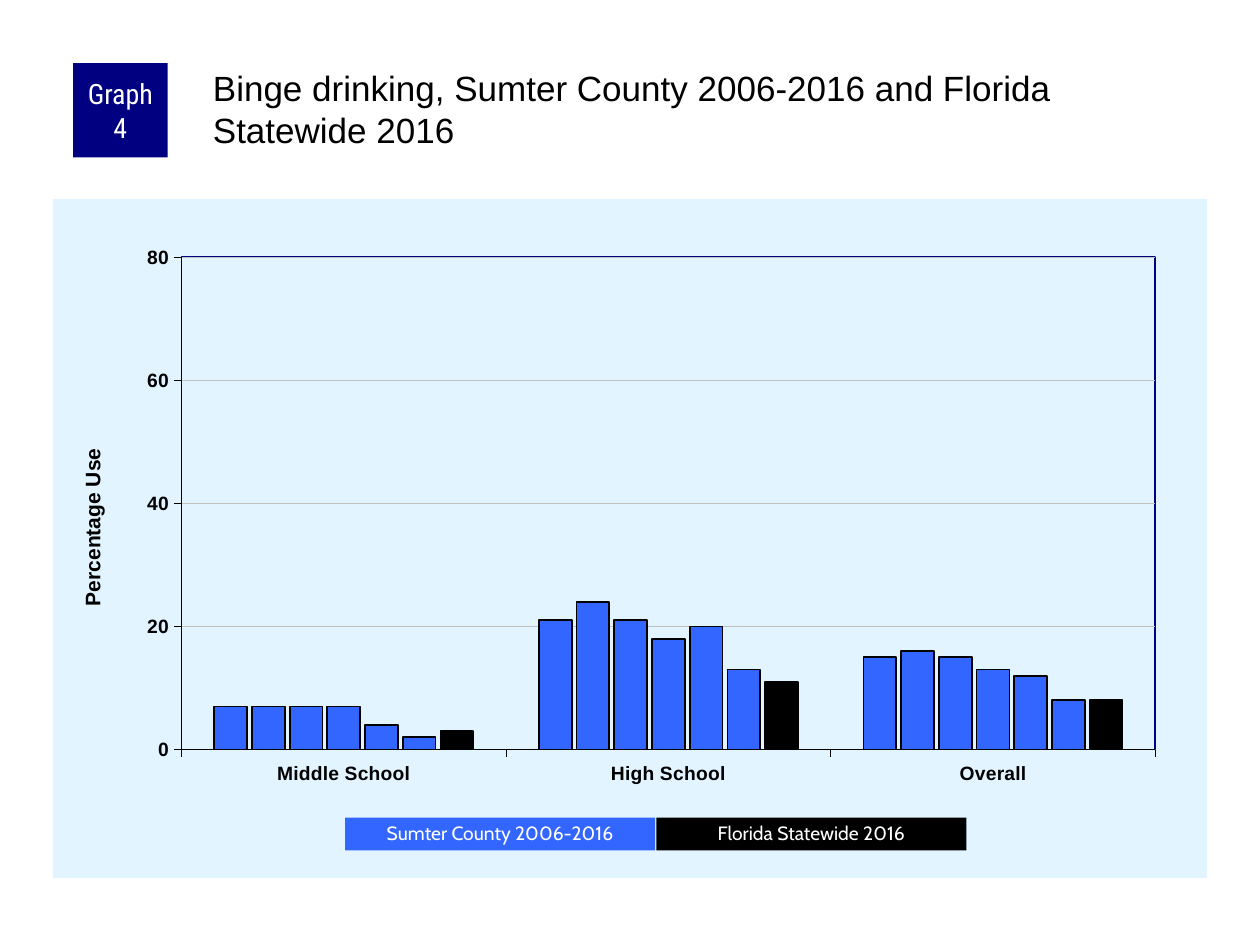
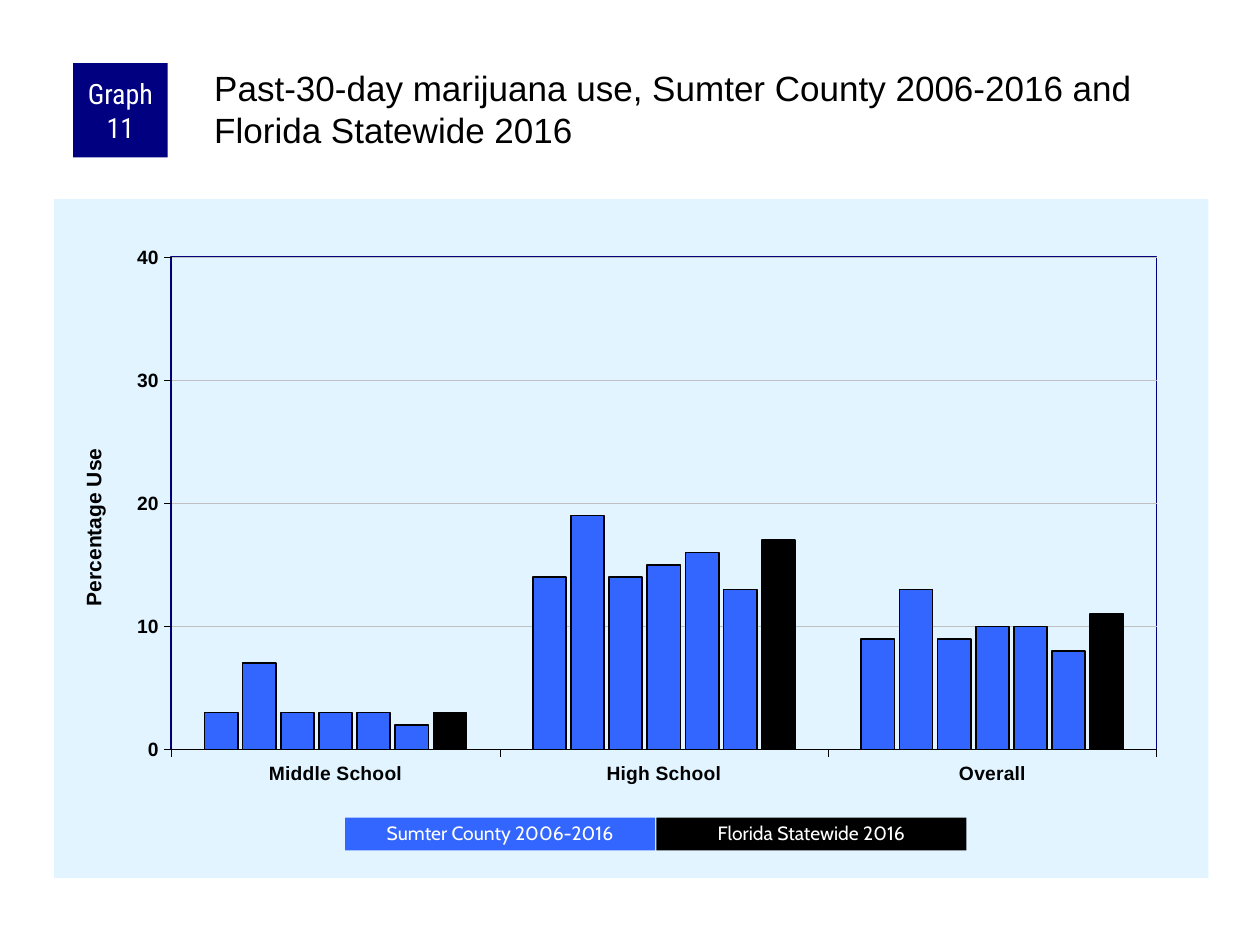
import pptx
import pptx.chart.data
import pptx.dml.color
import pptx.enum.chart
import pptx.enum.shapes
import pptx.enum.text
import pptx.oxml
import pptx.oxml.ns
import pptx.util

Inches = pptx.util.Inches
Pt = pptx.util.Pt
qn = pptx.oxml.ns.qn
Align = pptx.enum.text.PP_ALIGN
Anchor = pptx.enum.text.MSO_ANCHOR

NAVY, BLUE, BLACK = "000080", "3366FF", "000000"
WHITE, PALE, GRAY = "FFFFFF", "E1F4FF", "C0C0C0"
WIDE, HIGH = 9.16, 5.39  # chart size
GROUPS = ["Middle School", "High School", "Overall"]
KEYS = [("Sumter County 2006-2016", BLUE), ("Florida Statewide 2016", BLACK)]

GRAPHS = [
    dict(
        number=4, left=0.42, inset=1.02, top=80,
        title="Binge drinking, Sumter County 2006-2016 and Florida Statewide 2016",
        bars=[(7, 21, 15), (7, 24, 16), (7, 21, 15), (7, 18, 13),
              (4, 20, 12), (2, 13, 8), (3, 11, 8)],
    ),
    dict(
        number=11, left=0.43, inset=0.93, top=40,
        title="Past-30-day marijuana use, Sumter County 2006-2016 and Florida Statewide 2016",
        bars=[(3, 14, 9), (7, 19, 13), (3, 14, 9), (3, 15, 10),
              (3, 16, 10), (2, 13, 8), (3, 17, 11)],
    ),
]


def color(code):
    return pptx.dml.color.RGBColor.from_string(code)


def paint(fill, code):
    fill.solid()
    fill.fore_color.rgb = color(code)


def stroke(line, code, size):
    paint(line.fill, code)
    line.width = Pt(size)


def font_style(font, face="Arial", size=11, code=BLACK, bold=False):
    font.name, font.size, font.bold = face, Pt(size), bold
    font.color.rgb = color(code)


def write(frame, text, align=Align.LEFT, anchor=Anchor.TOP, pads=None, space=None, **style):
    """Fill a text frame; pads are left, top, right and bottom in inches."""
    frame.word_wrap = True
    frame.vertical_anchor = anchor
    if pads:
        (frame.margin_left, frame.margin_top,
         frame.margin_right, frame.margin_bottom) = map(Inches, pads)
    para = frame.paragraphs[0]
    para.alignment = align
    if space:
        para.line_spacing = space
    run = para.add_run()
    run.text = text
    font_style(run.font, **style)


def chart_xml(tag, inner):
    spaces = pptx.oxml.ns.nsdecls("c", "a")
    return pptx.oxml.parse_xml(f"<c:{tag} {spaces}>{inner}</c:{tag}>")


def place(parent, index, x, y, w=None, h=None):
    """Pin a chart part at inches measured from the chart's corner."""
    for old in parent.findall(qn("c:layout")):
        parent.remove(old)
    parts = [("xMode", "edge"), ("yMode", "edge"), ("x", x / WIDE), ("y", y / HIGH)]
    if w:
        parts.insert(0, ("layoutTarget", "inner"))
        parts += [("w", w / WIDE), ("h", h / HIGH)]
    inner = "".join(f'<c:{tag} val="{val}"/>' for tag, val in parts)
    layout = chart_xml("layout", f"<c:manualLayout>{inner}</c:manualLayout>")
    parent.insert(index, layout)


class Deck:
    def __init__(self):
        self.show = pptx.Presentation()
        self.show.slide_width, self.show.slide_height = Inches(10), Inches(7.5)
        self.slide = None

    def add_slide(self):
        self.slide = self.show.slides.add_slide(self.show.slide_layouts[6])
        paint(self.slide.background.fill, WHITE)

    def box(self, text, fill, *area, **style):
        shape = self.slide.shapes.add_shape(
            pptx.enum.shapes.MSO_SHAPE.RECTANGLE, *map(Inches, area))
        shape.shadow.inherit = False
        paint(shape.fill, fill)
        shape.line.fill.background()
        write(shape.text_frame, text, align=Align.CENTER, anchor=Anchor.MIDDLE,
              code=WHITE, **style)

    def title(self, text, left):
        area = map(Inches, (left, 0.5, 7.92, 0.83))
        frame = self.slide.shapes.add_textbox(*area).text_frame
        write(frame, text, size=20, pads=(0.03, 0.03, 0, 0))

    def chart(self, left, inset, top, bars):
        data = pptx.chart.data.CategoryChartData()
        data.categories = GROUPS
        for number, values in enumerate(bars, 1):
            data.add_series(f"Series {number}", values)
        chart = self.slide.shapes.add_chart(
            pptx.enum.chart.XL_CHART_TYPE.COLUMN_CLUSTERED,
            *map(Inches, (left, 1.58, WIDE, HIGH)), data).chart
        chart.has_legend = chart.has_title = False
        font_style(chart.font, size=8)
        self.bars(chart.plots[0])
        self.axes(chart, top)
        self.panel(chart, inset)

    def bars(self, plot):
        plot.gap_width, plot.overlap = 200, -15
        plot.vary_by_categories = False
        last = len(plot.series) - 1
        for index, series in enumerate(plot.series):
            paint(series.format.fill, BLACK if index == last else BLUE)
            stroke(series.format.line, BLACK, 1)

    def axes(self, chart, top):
        for axis in (chart.category_axis, chart.value_axis):
            axis.major_tick_mark = pptx.enum.chart.XL_TICK_MARK.OUTSIDE
            axis.minor_tick_mark = pptx.enum.chart.XL_TICK_MARK.NONE
            font_style(axis.tick_labels.font, bold=True)
            stroke(axis.format.line, BLACK, 0.25)
        axis = chart.value_axis
        axis.minimum_scale, axis.maximum_scale, axis.major_unit = 0, top, top / 4
        stroke(axis.major_gridlines.format.line, GRAY, 0.25)
        frame = axis.axis_title.text_frame
        run = frame.paragraphs[0].add_run()
        run.text = "Percentage Use"
        font_style(run.font, size=12, bold=True)
        body = frame._txBody.find(qn("a:bodyPr"))
        body.set("rot", "-5400000")
        body.set("vert", "horz")
        place(axis.axis_title._element, 1, 0.18, 1.95)

    def panel(self, chart, inset):
        """Set the pale ground and the navy frame of the plot."""
        root = chart._chartSpace.find(qn("c:chart"))
        ground = f'<a:solidFill><a:srgbClr val="{PALE}"/></a:solidFill>'
        root.addnext(chart_xml("spPr", ground + "<a:ln><a:noFill/></a:ln>"))
        area = root.find(qn("c:plotArea"))
        place(area, 0, inset, 0.46, 8.75 - inset, 3.91)
        edge = f'<a:solidFill><a:srgbClr val="{NAVY}"/></a:solidFill>'
        area.append(chart_xml("spPr", f'<a:noFill/><a:ln w="{int(Pt(1))}">{edge}</a:ln>'))

    def graph(self, number, title, left, inset, top, bars):
        self.add_slide()
        self.chart(left, inset, top, bars)
        self.box(f"Graph {number}", NAVY, 0.58, 0.5, 0.75, 0.75,
                 face="Roboto Condensed", size=16, pads=(0.05, 0, 0.05, 0))
        self.title(title, left + 1.24)
        for index, (name, fill) in enumerate(KEYS):
            self.box(name, fill, 2.74 + index * 2.47, 6.49, 2.46, 0.26,
                     face="Cabin", space=0.9)


def main():
    deck = Deck()
    for graph in GRAPHS:
        deck.graph(**graph)
    deck.show.save("out.pptx")


if __name__ == "__main__":
    main()
